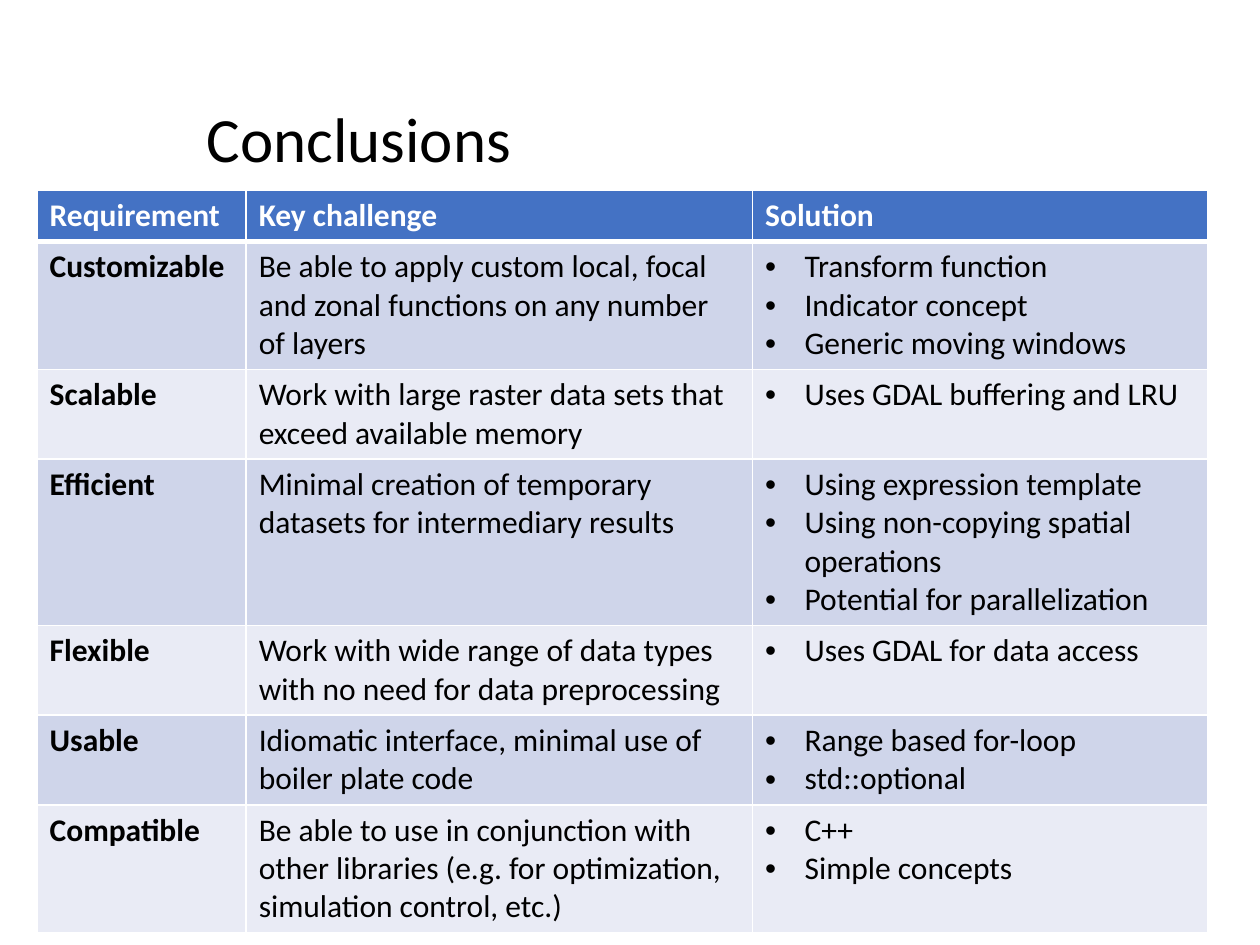
from lxml.etree import SubElement
from pptx import Presentation
from pptx.dml.color import RGBColor
from pptx.enum.text import MSO_ANCHOR, PP_ALIGN
from pptx.oxml.ns import qn
from pptx.util import Pt

FONT = "Calibri"
BLACK, WHITE, HEADER = "000000", "FFFFFF", "4472C4"
BANDS = ("CFD5EA", "E9EBF5")
LINE_HEIGHT, CELL_PADDING, INDENT = 22, 7.2, 22.5

HEADINGS = ("Requirement", "Key challenge", "Solution")
REQUIREMENTS = [
    (3, "Customizable",
     "Be able to apply custom local, focal and zonal functions on any number of layers",
     ["Transform function", "Indicator concept", "Generic moving windows"]),
    (2, "Scalable",
     "Work with large raster data sets that exceed available memory",
     ["Uses GDAL buffering and LRU"]),
    (4, "Efficient",
     "Minimal creation of temporary datasets for intermediary results",
     ["Using expression template", "Using non-copying spatial operations",
      "Potential for parallelization"]),
    (2, "Flexible",
     "Work with wide range of data types with no need for data preprocessing",
     ["Uses GDAL for data access"]),
    (2, "Usable",
     "Idiomatic interface, minimal use of boiler plate code",
     ["Range based for-loop", "std::optional"]),
    (3, "Compatible",
     "Be able to use in conjunction with other libraries "
     "(e.g. for optimization, simulation control, etc.)",
     ["C++", "Simple concepts"]),
]


def color(value):
    return RGBColor.from_string(value)


def set_font(para, size, value, bold=False):
    font = para.font
    font.name, font.size, font.bold = FONT, Pt(size), bold
    font.color.rgb = color(value)


def add_bullet(para):
    properties = para._p.get_or_add_pPr()
    properties.set("marL", str(Pt(INDENT)))
    properties.set("indent", str(-Pt(INDENT)))
    SubElement(properties, qn("a:buFont"), typeface="Arial")
    SubElement(properties, qn("a:buChar"), char="•")


def set_borders(cell, bottom):
    properties = cell._tc.get_or_add_tcPr()
    for side, width in (("L", 1), ("R", 1), ("T", 1), ("B", bottom)):
        line = SubElement(properties, qn(f"a:ln{side}"), w=str(Pt(width)))
        fill = SubElement(line, qn("a:solidFill"))
        SubElement(fill, qn("a:srgbClr"), val=WHITE)


def fill_cell(cell, lines, fill, value=BLACK, bold=False, bullets=False, bottom=1):
    set_borders(cell, bottom)
    cell.fill.solid()
    cell.fill.fore_color.rgb = color(fill)
    cell.text = "\n".join(lines)
    for para in cell.text_frame.paragraphs:
        if bullets:
            add_bullet(para)
        set_font(para, 18, value, bold)


def place_title(page, left, top, width, height):
    title = page.shapes.title
    title.left, title.top = Pt(left), Pt(top)
    title.width, title.height = Pt(width), Pt(height)
    frame = title.text_frame
    frame.text = "Conclusions"
    frame.vertical_anchor = MSO_ANCHOR.MIDDLE
    para = frame.paragraphs[0]
    para.alignment = PP_ALIGN.LEFT
    para.line_spacing = 0.9
    set_font(para, 36, BLACK)


def place_table(page, left, top, widths):
    line_counts = [1] + [row[0] for row in REQUIREMENTS]
    heights = [count * LINE_HEIGHT + CELL_PADDING for count in line_counts]
    table = page.shapes.add_table(
        len(heights), len(widths), Pt(left), Pt(top),
        Pt(sum(widths)), Pt(sum(heights))).table
    for column, width in zip(table.columns, widths):
        column.width = Pt(width)
    for row, height in zip(table.rows, heights):
        row.height = Pt(height)
    for column, heading in enumerate(HEADINGS):
        fill_cell(table.cell(0, column), [heading], HEADER, WHITE, bold=True, bottom=3)
    for row, (_, name, challenge, solutions) in enumerate(REQUIREMENTS, 1):
        band = BANDS[(row - 1) % 2]
        fill_cell(table.cell(row, 0), [name], band, bold=True)
        fill_cell(table.cell(row, 1), [challenge], band)
        fill_cell(table.cell(row, 2), solutions, band, bullets=True)


def main():
    deck = Presentation()
    deck.slide_width, deck.slide_height = Pt(720), Pt(540)
    page = deck.slides.add_slide(deck.slide_layouts[5])
    place_title(page, 111, 28.8, 559.5, 104.4)
    place_table(page, 21.2, 108.7, (119.5, 289.4, 260))
    deck.save("out.pptx")


if __name__ == "__main__":
    main()
